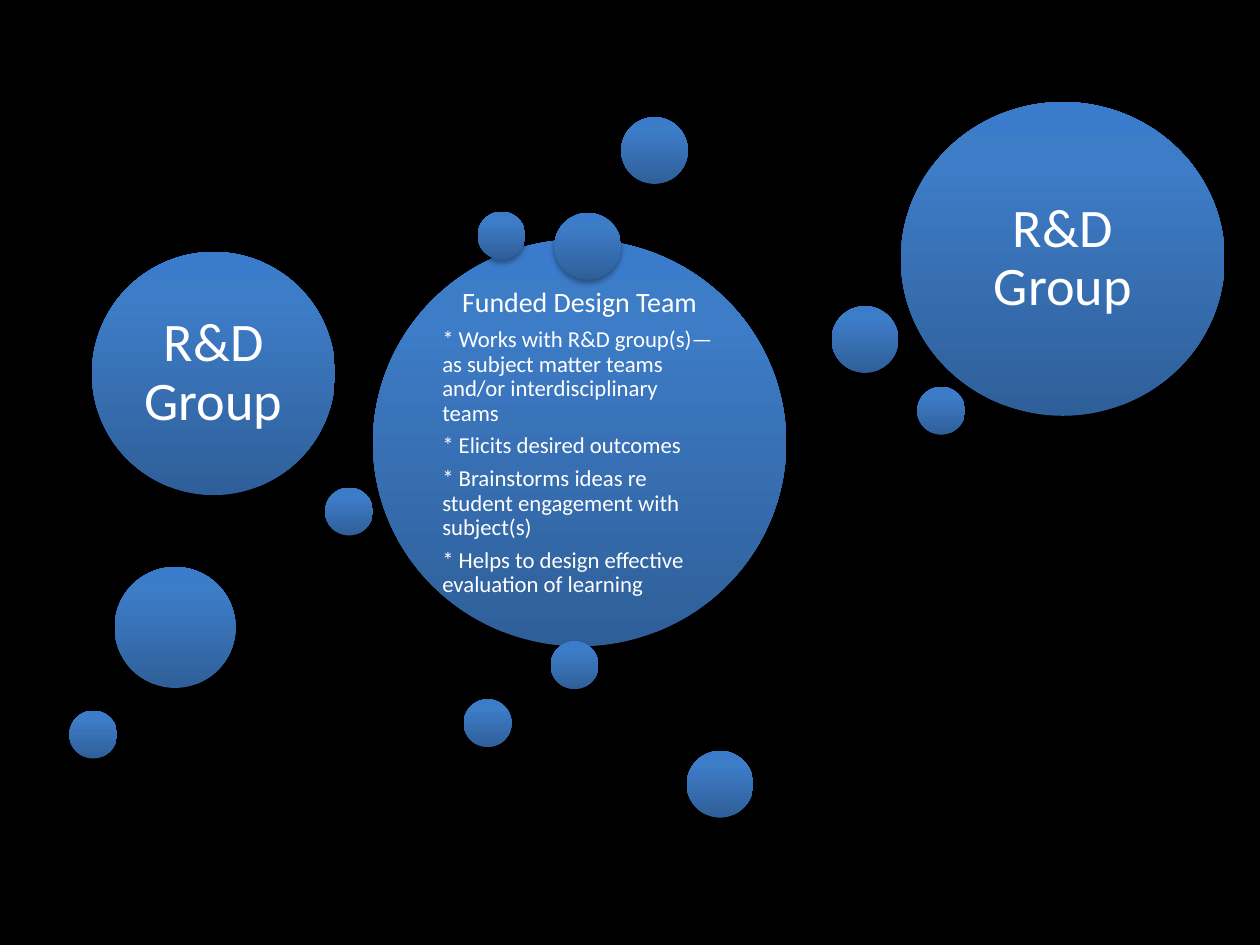
from copy import deepcopy
from pptx import Presentation
from pptx.dml.color import RGBColor
from pptx.enum.shapes import MSO_SHAPE
from pptx.enum.text import MSO_ANCHOR, PP_ALIGN
from pptx.oxml import parse_xml
from pptx.oxml.ns import nsdecls, qn
from pptx.util import Inches, Pt

SHADOW = (
    f'<a:effectLst {nsdecls("a")}>'
    '<a:outerShdw blurRad="40000" dist="23000" dir="5400000" rotWithShape="0">'
    '<a:srgbClr val="000000"><a:alpha val="35000"/></a:srgbClr>'
    '</a:outerShdw></a:effectLst>'
)
TINY, SMALL = 0.38, 0.53


def color(code):
    return RGBColor.from_string(code)


class Board:
    """Draws shaded circles and their text on one slide."""

    font = "Calibri"
    ink = "FFFFFF"
    back = "000000"
    shades = ((0, "2F5F99"), (0.8, "3D7CC7"), (1, "3A7CCB"))

    def __init__(self, deck):
        self.slide = deck.slides.add_slide(deck.slide_layouts[6])
        fill = self.slide.background.fill
        fill.solid()
        fill.fore_color.rgb = color(self.back)

    def circle(self, left, top, width, height=None):
        shape = self.slide.shapes.add_shape(
            MSO_SHAPE.OVAL, Inches(left), Inches(top),
            Inches(width), Inches(height or width))
        shape.line.fill.background()
        self.shade(shape)
        shape._element.spPr.append(parse_xml(SHADOW))
        return shape

    def shade(self, shape):
        fill = shape.fill
        fill.gradient()
        fill.gradient_angle = 90
        stops = shape._element.spPr.find(qn("a:gradFill")).find(qn("a:gsLst"))
        stops.append(deepcopy(stops[-1]))
        for stop, (place, code) in zip(fill.gradient_stops, self.shades):
            stop.position = place
            stop.color.rgb = color(code)

    def label(self, shape, lines, inset):
        frame = shape.text_frame
        frame.word_wrap = True
        frame.vertical_anchor = MSO_ANCHOR.MIDDLE
        frame.margin_left = frame.margin_right = Inches(inset)
        frame.margin_top = frame.margin_bottom = Inches(inset)
        frame.text = "\n".join(text for text, size, align in lines)
        for para, (text, size, align) in zip(frame.paragraphs, lines):
            para.alignment = align
            para.line_spacing = 0.9
            para.space_after = Pt(round(size * 0.35, 1))
            font = para.runs[0].font
            font.name = self.font
            font.size = Pt(size)
            font.color.rgb = color(self.ink)

    def group(self, left, top, width, height):
        shape = self.circle(left, top, width, height)
        self.label(shape, [("R&D Group", 31, PP_ALIGN.CENTER)], 0.13)

    def team(self, left, top, width, height, title, tasks):
        lines = [(title, 16, PP_ALIGN.CENTER)]
        lines += [(f"* {task}", 13, PP_ALIGN.LEFT) for task in tasks]
        self.label(self.circle(left, top, width, height), lines, 0.07)

    def dots(self, *spots):
        for spot in spots:
            self.circle(*spot)


def main():
    deck = Presentation()
    deck.slide_width, deck.slide_height = Inches(10), Inches(7.5)
    board = Board(deck)
    board.team(2.96, 1.9, 3.28, 3.23, "Funded Design Team", [
        "Works with R&D group(s)—as subject matter teams and/or "
        "interdisciplinary teams",
        "Elicits desired outcomes",
        "Brainstorms ideas re student engagement with subject(s)",
        "Helps to design effective evaluation of learning",
    ])
    board.dots(
        (4.93, 0.93, SMALL), (3.68, 5.55, TINY), (7.28, 3.07, TINY),
        (5.45, 5.96, SMALL), (3.79, 1.68, TINY), (2.58, 3.87, TINY))
    board.group(0.73, 2, 1.93, 1.93)
    board.dots((4.4, 1.69, SMALL), (0.91, 4.5, 0.96))
    board.group(7.15, 0.81, 2.57, 2.49)
    board.dots((6.6, 2.43, SMALL), (0.55, 5.64, TINY), (4.37, 5.09, TINY))
    deck.save("out.pptx")


if __name__ == "__main__":
    main()
